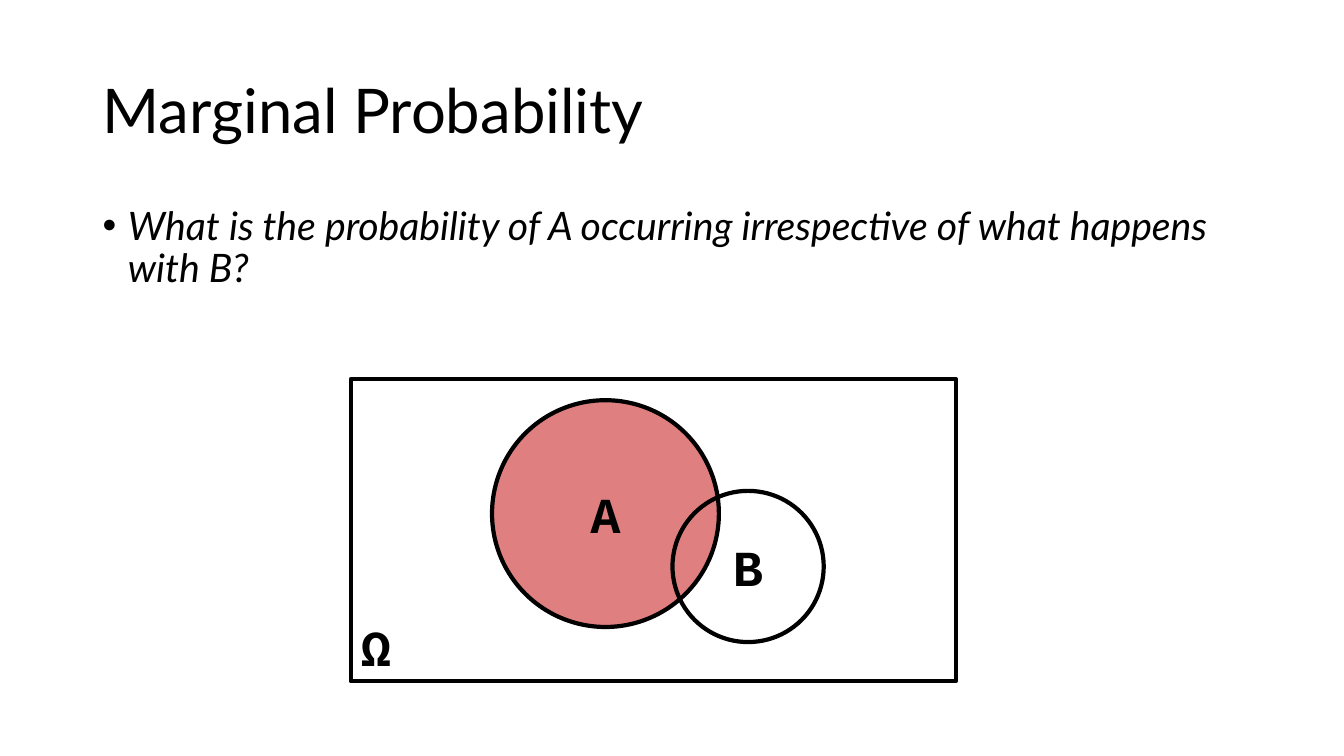
"""Build the Marginal Probability slide with its Venn diagram."""
from dataclasses import dataclass

from lxml import etree
from pptx import Presentation
from pptx import util as u
from pptx.dml.color import RGBColor
from pptx.enum import shapes, text
from pptx.oxml import ns

PX = 9144
BLACK = "000000"
RED = "C00000"


@dataclass(frozen=True)
class Caption:
    """Wording with its typeface and placement."""
    words: str
    font: str
    size: int
    bold: bool = False
    italic: bool = False
    align: text.PP_ALIGN = text.PP_ALIGN.LEFT
    anchor: text.MSO_ANCHOR = text.MSO_ANCHOR.MIDDLE


@dataclass(frozen=True)
class Region:
    """One outlined region of the Venn diagram."""
    kind: shapes.MSO_SHAPE
    box: tuple[int, int, int, int]
    caption: Caption
    fill: str | None = None
    opacity: int = 100


def px(length: int) -> u.Emu:
    """Turn pixels into EMU."""
    return u.Emu(length * PX)


def color(value: str) -> RGBColor:
    """Turn a hex string into a colour."""
    return RGBColor.from_string(value)


def write(frame, caption: Caption):
    """Write a caption into a text frame and return its paragraph."""
    frame.word_wrap = True
    frame.vertical_anchor = caption.anchor
    paragraph = frame.paragraphs[0]
    paragraph.text = caption.words
    paragraph.alignment = caption.align
    font = paragraph.font
    font.name, font.size = caption.font, u.Pt(caption.size)
    font.bold, font.italic = caption.bold, caption.italic
    font.color.rgb = color(BLACK)
    return paragraph


def add_caption(slide, box: tuple[int, int, int, int], caption: Caption):
    """Add a text box with tight lines and return its paragraph."""
    frame = slide.shapes.add_textbox(*map(px, box)).text_frame
    paragraph = write(frame, caption)
    paragraph.line_spacing = 0.9
    return paragraph


def add_bullet(paragraph, indent: int) -> None:
    """Give a paragraph a hanging bullet."""
    properties = paragraph._p.get_or_add_pPr()
    properties.set("marL", str(px(indent)))
    properties.set("indent", str(-px(indent)))
    bullet_font = etree.Element(ns.qn("a:buFont"), typeface="Arial")
    bullet = etree.Element(ns.qn("a:buChar"), char="•")
    defaults = properties.find(ns.qn("a:defRPr"))
    defaults.addprevious(bullet_font)
    defaults.addprevious(bullet)


def add_region(slide, region: Region) -> None:
    """Draw a region with its outline, fill and caption."""
    shape = slide.shapes.add_shape(region.kind, *map(px, region.box))
    shape.shadow.inherit = False
    shape.line.color.rgb = color(BLACK)
    shape.line.width = u.Pt(3)
    if region.fill:
        shape.fill.solid()
        shape.fill.fore_color.rgb = color(region.fill)
        tint = shape.fill._xPr.find(".//" + ns.qn("a:srgbClr"))
        etree.SubElement(tint, ns.qn("a:alpha"), val=str(region.opacity * 1000))
    else:
        shape.fill.background()
    write(shape.text_frame, region.caption)


def event(words: str) -> Caption:
    """Make the centred label of an event."""
    return Caption(words, "Courier New", 36, bold=True, align=text.PP_ALIGN.CENTER)


TITLE = Caption("Marginal Probability", "Lato", 44)
QUESTION = Caption(
    "What is the probability of A occurring irrespective of what happens with B?",
    "Lato", 28, italic=True, anchor=text.MSO_ANCHOR.TOP)
OMEGA = Caption("Ω", "Courier New", 36, bold=True, anchor=text.MSO_ANCHOR.BOTTOM)
VENN = (
    Region(shapes.MSO_SHAPE.RECTANGLE, (348, 376, 600, 300), OMEGA),
    Region(shapes.MSO_SHAPE.OVAL, (488, 397, 225, 225), event("A"), RED, 50),
    Region(shapes.MSO_SHAPE.OVAL, (667, 487, 150, 150), event("B")),
)


def main() -> None:
    """Build and save the slide."""
    deck = Presentation()
    deck.slide_width, deck.slide_height = px(1333), px(750)
    slide = deck.slides.add_slide(deck.slide_layouts[6])
    add_caption(slide, (92, 40, 1150, 145), TITLE)
    question = add_caption(slide, (92, 200, 1150, 476), QUESTION)
    question.space_before = u.Pt(10)
    add_bullet(question, 25)
    for region in VENN:
        add_region(slide, region)
    deck.save("out.pptx")


if __name__ == "__main__":
    main()
